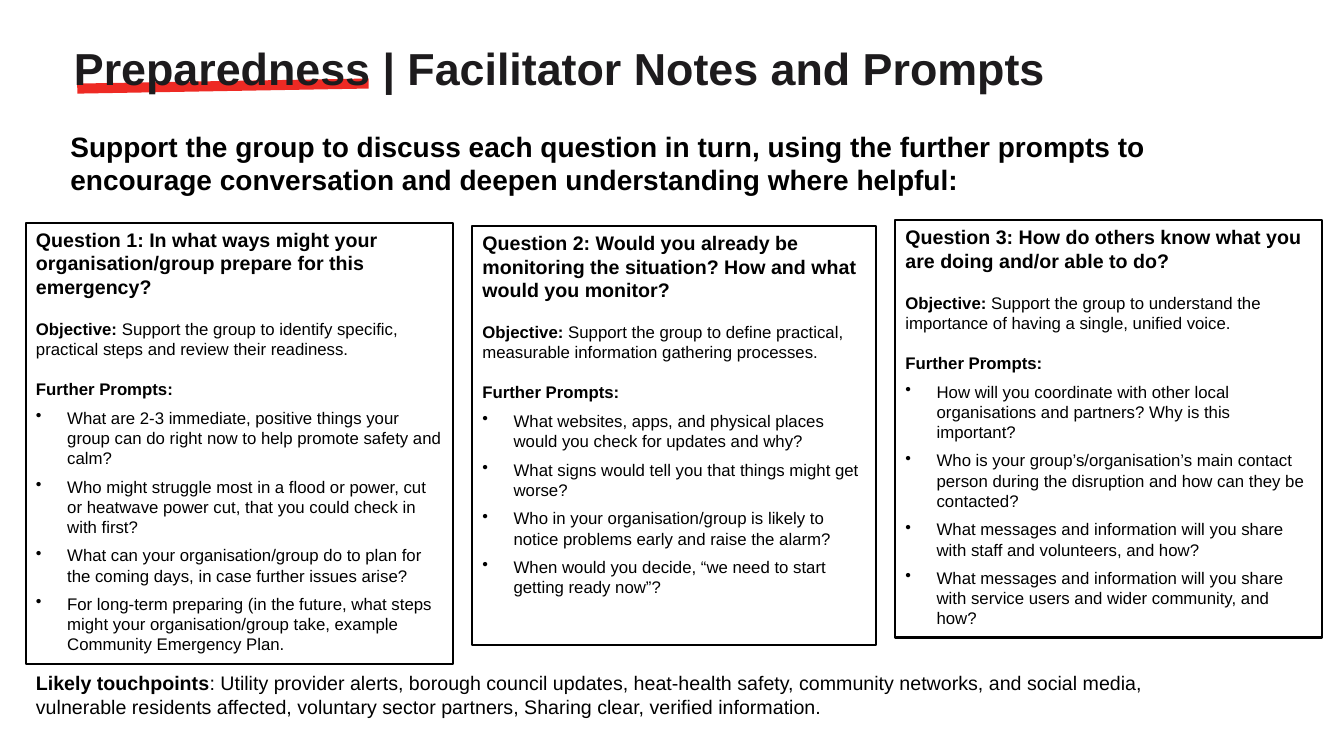
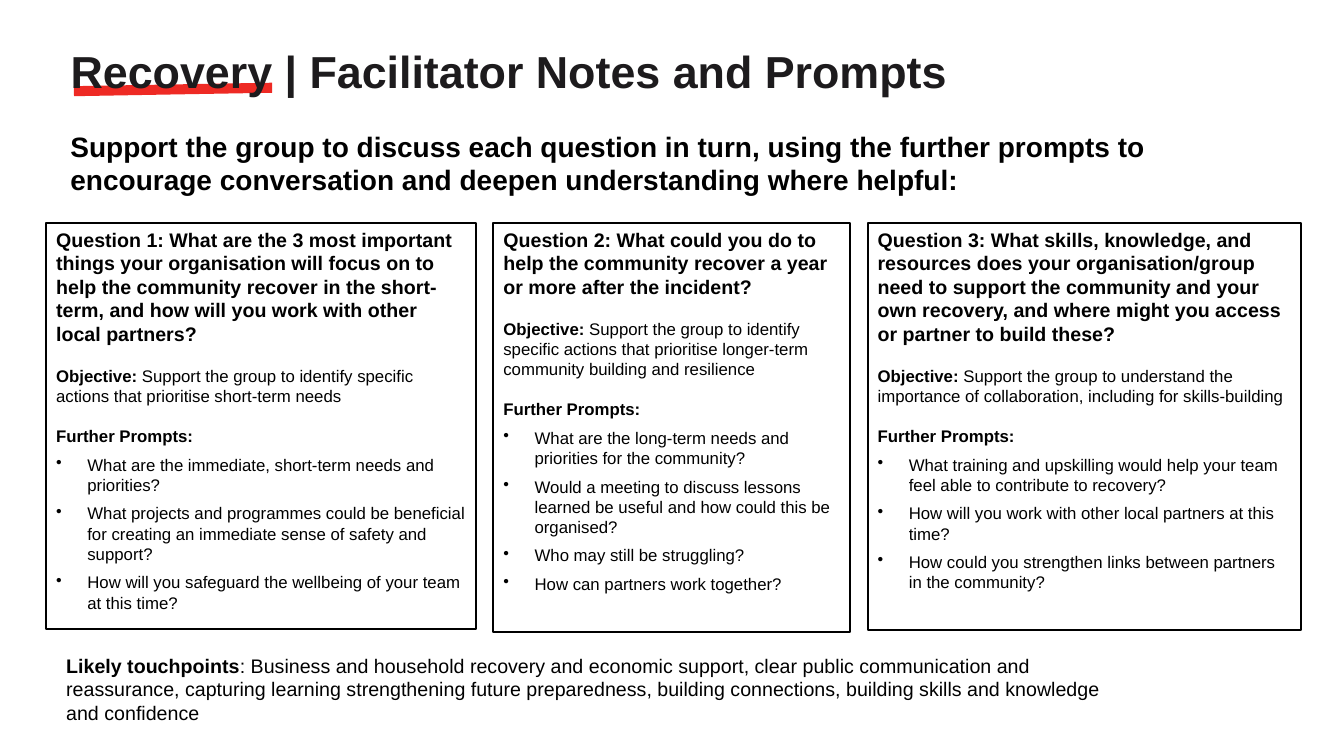
from lxml import etree
from pptx import Presentation
from pptx import util as u
from pptx.dml import color
from pptx.enum import shapes, text
from pptx.oxml import ns

FONT = "Arial"
BLACK, DARK, RED = "000000", "1D1B1D", "EE2A24"
UNIT = u.Inches(1) / 12
LEAD = ("Support the group to discuss each question in turn, using the further prompts "
        "to encourage conversation and deepen understanding where helpful:")


def rgb(code):
    """Turn a hex string into a colour."""
    return color.RGBColor.from_string(code)


def area(*cells):
    """Turn cells of the 160 by 90 grid into lengths."""
    return [round(c * UNIT) for c in cells]


class Deck:
    """Holds the shared style and the current slide."""

    def __init__(self):
        """Start an empty wide deck."""
        self.prs = Presentation()
        self.prs.slide_width, self.prs.slide_height = area(160, 90)

    def frame(self, shape):
        """Give a shape wrapped text that starts at the top."""
        frame = shape.text_frame
        frame.word_wrap = True
        frame.auto_size = text.MSO_AUTO_SIZE.NONE
        frame.vertical_anchor = text.MSO_ANCHOR.TOP
        return frame

    def para(self, frame, size, bold="", plain="", tint=BLACK, before=0, after=0, dot=False):
        """Write a paragraph with a bold part and a plain part."""
        para = frame.add_paragraph() if frame.text else frame.paragraphs[0]
        para.alignment = text.PP_ALIGN.LEFT
        para.space_before, para.space_after = u.Pt(before), u.Pt(after)
        if dot:
            props = para._p.get_or_add_pPr()
            inset = u.Inches(0.31)
            props.set("marL", str(inset))
            props.set("indent", str(-inset))
            etree.SubElement(props, ns.qn("a:buChar")).set("char", "•")
        for words, heavy in ((bold, True), (plain, False)):
            if words:
                run = para.add_run()
                run.text = words
                run.font.name, run.font.size, run.font.bold = FONT, u.Pt(size), heavy
                run.font.color.rgb = rgb(tint)

    def rect(self, *cells):
        """Draw a bare rectangle."""
        shape = self.slide.shapes.add_shape(shapes.MSO_SHAPE.RECTANGLE, *area(*cells))
        shape.shadow.inherit = False
        return shape

    def title(self, words, left, top, width):
        """Add a slide with a title and a tilted bar under its first word."""
        self.slide = self.prs.slides.add_slide(self.prs.slide_layouts[5])
        title = self.slide.shapes.title
        title.left, title.top, title.width, title.height = area(left, top, 146, 7.7)
        self.para(self.frame(title), 32, words, tint=DARK)
        bar = self.rect(left + 1.6, top + 5.45, width, 1.2)
        bar.fill.solid()
        bar.fill.fore_color.rgb = rgb(RED)
        bar.line.fill.background()
        bar.rotation = -1
        title.element.addprevious(bar.element)

    def note(self, cells, size, bold, plain=""):
        """Add a text box."""
        box = self.slide.shapes.add_textbox(*area(*cells))
        self.para(self.frame(box), size, bold, plain)

    def card(self, cells, head, goal, asks):
        """Add an outlined question with its objective and prompts."""
        box = self.rect(*cells)
        box.fill.background()
        box.line.color.rgb = rgb(BLACK)
        box.line.width = u.Pt(1.5)
        frame = self.frame(box)
        self.para(frame, 14, head)
        self.para(frame, 12, "Objective:", " " + goal, before=14.4)
        self.para(frame, 12, "Further Prompts:", before=14.4, after=6)
        for ask in asks:
            self.para(frame, 12, plain=ask, after=6, dot=True)

    def page(self, name, spot, left, gap, cards, foot, touch):
        """Build one whole notes slide."""
        self.title(name + " | Facilitator Notes and Prompts", *spot)
        self.note((7.2, 14.8, 133.2, 9.2), 20, LEAD)
        for num, (top, width, height, head, goal, asks) in enumerate(cards, 1):
            self.card((left, top, width, height), f"Question {num}: {head}", goal, asks)
            left += width + gap
        self.note(foot, 14, "Likely touchpoints", ": " + touch)


READY = [
    (26.5, 50.8, 52.6,
     "In what ways might your organisation/group prepare for this emergency?",
     "Support the group to identify specific, practical steps and review their readiness.",
     ["What are 2-3 immediate, positive things your group can do right now to help promote "
      "safety and calm?",
      "Who might struggle most in a flood or power, cut or heatwave power cut, that you could "
      "check in with first?",
      "What can your organisation/group do to plan for the coming days, in case further issues "
      "arise?",
      "For long-term preparing (in the future, what steps might your organisation/group take, "
      "example Community Emergency Plan."]),
    (26.9, 48, 49.9,
     "Would you already be monitoring the situation? How and what would you monitor?",
     "Support the group to define practical, measurable information gathering processes.",
     ["What websites, apps, and physical places would you check for updates and why?",
      "What signs would tell you that things might get worse?",
      "Who in your organisation/group is likely to notice problems early and raise the alarm?",
      "When would you decide, “we need to start getting ready now”?"]),
    (26.2, 50.8, 49.7,
     "How do others know what you are doing and/or able to do?",
     "Support the group to understand the importance of having a single, unified voice.",
     ["How will you coordinate with other local organisations and partners? Why is this "
      "important?",
      "Who is your group’s/organisation’s main contact person during the disruption and how can "
      "they be contacted?",
      "What messages and information will you share with staff and volunteers, and how?",
      "What messages and information will you share with service users and wider community, "
      "and how?"]),
]
MEND = [
    (26.5, 51.2, 48.4,
     "What are the 3 most important things your organisation will focus on to help the "
     "community recover in the short-term, and how will you work with other local partners?",
     "Support the group to identify specific actions that prioritise short-term needs",
     ["What are the immediate, short-term needs and priorities?",
      "What projects and programmes could be beneficial for creating an immediate sense of "
      "safety and support?",
      "How will you safeguard the wellbeing of your team at this time?"]),
    (26.5, 42.5, 48.7,
     "What could you do to help the community recover a year or more after the incident?",
     "Support the group to identify specific actions that prioritise longer-term community "
     "building and resilience",
     ["What are the long-term needs and priorities for the community?",
      "Would a meeting to discuss lessons learned be useful and how could this be organised?",
      "Who may still be struggling?",
      "How can partners work together?"]),
    (26.5, 51.6, 48.5,
     "What skills, knowledge, and resources does your organisation/group need to support the "
     "community and your own recovery, and where might you access or partner to build these?",
     "Support the group to understand the importance of collaboration, including for "
     "skills-building",
     ["What training and upskilling would help your team feel able to contribute to recovery?",
      "How will you work with other local partners at this time?",
      "How could you strengthen links between partners in the community?"]),
]


def main():
    """Build both slides and save them."""
    deck = Deck()
    deck.page("Preparedness", (7.6, 4.2, 34.7), 3.1, 2.35, READY, (3.1, 79.3, 141.8, 6.8),
              "Utility provider alerts, borough council updates, heat-health safety, community "
              "networks, and social media, vulnerable residents affected, voluntary sector "
              "partners, Sharing clear, verified information.")
    deck.page("Recovery", (7.2, 4.6, 23.6), 5.5, 2.05, MEND, (6.7, 77.2, 126.1, 9.7),
              "Business and household recovery and economic support, clear public communication "
              "and reassurance, capturing learning strengthening future preparedness, building "
              "connections, building skills and knowledge and confidence")
    deck.prs.save("out.pptx")


if __name__ == "__main__":
    main()
